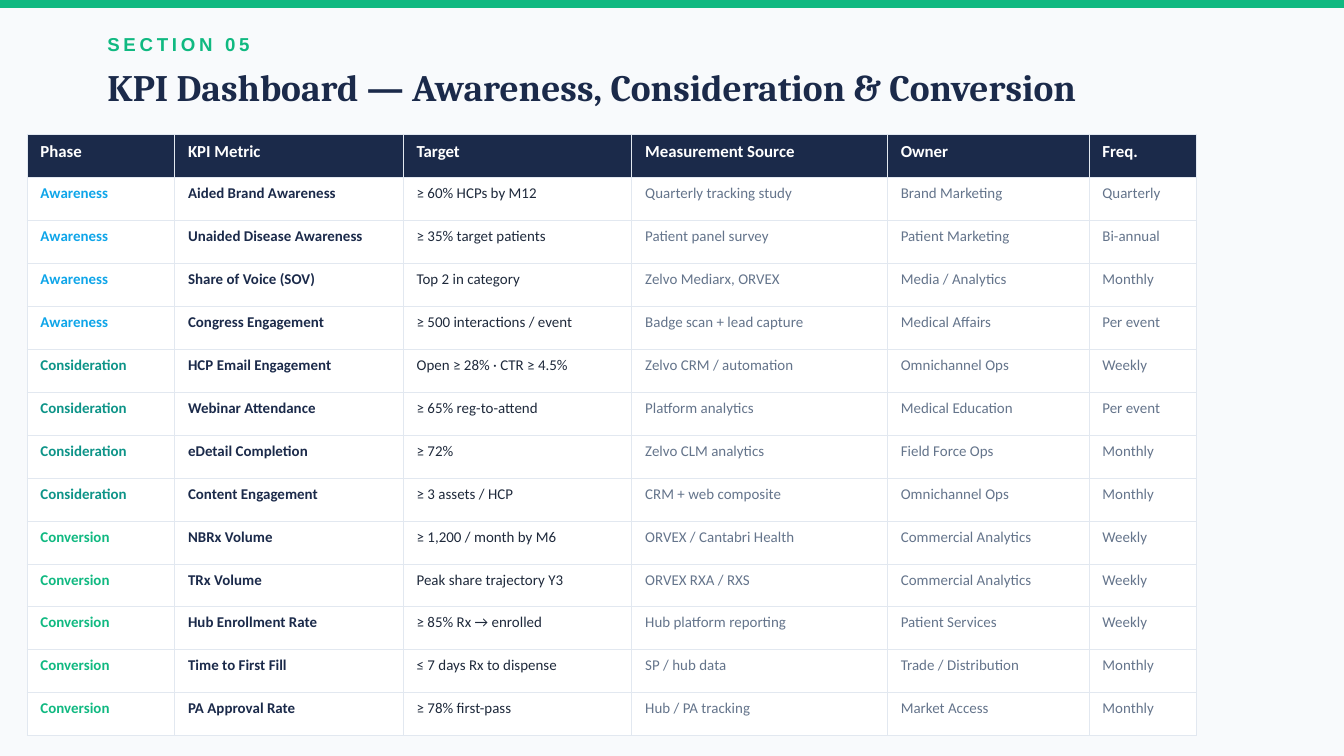
from lxml.etree import SubElement
from pptx import Presentation
from pptx.dml.color import RGBColor
from pptx.enum.shapes import MSO_SHAPE
from pptx.enum.text import MSO_ANCHOR
from pptx.oxml.ns import qn
from pptx.util import Cm, Pt

COLORS = {
    "background": "F8FAFC", "accent": "10B981", "navy": "1B2A4A",
    "white": "FFFFFF", "ink": "1E293B", "muted": "64748B", "border": "E2E8F0",
    "Awareness": "0EA5E9", "Consideration": "0D9488", "Conversion": "10B981",
}

SECTION = "SECTION 05"
TITLE = "KPI Dashboard — Awareness, Consideration & Conversion"

# Heading and width in cm
COLUMNS = [
    ("Phase", 2.79), ("KPI Metric", 4.32), ("Target", 4.32),
    ("Measurement Source", 4.83), ("Owner", 3.81), ("Freq.", 2.03),
]

KPIS = {
    "Awareness": [
        ("Aided Brand Awareness", "≥ 60% HCPs by M12", "Quarterly tracking study", "Brand Marketing", "Quarterly"),
        ("Unaided Disease Awareness", "≥ 35% target patients", "Patient panel survey", "Patient Marketing", "Bi-annual"),
        ("Share of Voice (SOV)", "Top 2 in category", "Zelvo Mediarx, ORVEX", "Media / Analytics", "Monthly"),
        ("Congress Engagement", "≥ 500 interactions / event", "Badge scan + lead capture", "Medical Affairs", "Per event"),
    ],
    "Consideration": [
        ("HCP Email Engagement", "Open ≥ 28% · CTR ≥ 4.5%", "Zelvo CRM / automation", "Omnichannel Ops", "Weekly"),
        ("Webinar Attendance", "≥ 65% reg-to-attend", "Platform analytics", "Medical Education", "Per event"),
        ("eDetail Completion", "≥ 72%", "Zelvo CLM analytics", "Field Force Ops", "Monthly"),
        ("Content Engagement", "≥ 3 assets / HCP", "CRM + web composite", "Omnichannel Ops", "Monthly"),
    ],
    "Conversion": [
        ("NBRx Volume", "≥ 1,200 / month by M6", "ORVEX / Cantabri Health", "Commercial Analytics", "Weekly"),
        ("TRx Volume", "Peak share trajectory Y3", "ORVEX RXA / RXS", "Commercial Analytics", "Weekly"),
        ("Hub Enrollment Rate", "≥ 85% Rx → enrolled", "Hub platform reporting", "Patient Services", "Weekly"),
        ("Time to First Fill", "≤ 7 days Rx to dispense", "SP / hub data", "Trade / Distribution", "Monthly"),
        ("PA Approval Rate", "≥ 78% first-pass", "Hub / PA tracking", "Market Access", "Monthly"),
    ],
}


def rgb(name):
    return RGBColor.from_string(COLORS[name])


def write(frame, text, *, size, color, font="Calibri", bold=False, spacing=None):
    run = frame.paragraphs[0].add_run()
    run.text = text
    run.font.name = font
    run.font.size = Pt(size)
    run.font.bold = bold
    run.font.color.rgb = rgb(color)
    if spacing:
        run._r.get_or_add_rPr().set("spc", str(spacing * 100))


def add_heading(slide, text, top, width, height, **text_format):
    frame = slide.shapes.add_textbox(Cm(2.03), Cm(top), Cm(width), Cm(height)).text_frame
    frame.word_wrap = True
    frame.vertical_anchor = MSO_ANCHOR.MIDDLE
    frame.margin_left = frame.margin_right = frame.margin_top = frame.margin_bottom = 0
    write(frame, text, **text_format)


def add_borders(cell):
    properties = cell._tc.get_or_add_tcPr()
    for side in ("lnL", "lnR", "lnT", "lnB"):
        line = SubElement(properties, qn(f"a:{side}"), w=str(Pt(0.5)))
        fill = SubElement(line, qn("a:solidFill"))
        SubElement(fill, qn("a:srgbClr"), val=COLORS["border"])


def fill_cell(cell, text, fill, **text_format):
    add_borders(cell)  # borders must precede the fill in the cell XML
    cell.fill.solid()
    cell.fill.fore_color.rgb = rgb(fill)
    write(cell.text_frame, text, **text_format)


def add_kpi_table(slide):
    kpi_rows = [(phase, *kpi) for phase, kpis in KPIS.items() for kpi in kpis]
    table = slide.shapes.add_table(
        len(kpi_rows) + 1, len(COLUMNS), Cm(0.51), Cm(2.54),
        Cm(sum(width for _, width in COLUMNS)), Cm(11.38)).table
    table.horz_banding = False

    for column, (heading, width) in enumerate(COLUMNS):
        table.columns[column].width = Cm(width)
        fill_cell(table.cell(0, column), heading, "navy", size=9, color="white", bold=True)

    for row, values in enumerate(kpi_rows, start=1):
        text_colors = (values[0], "navy", "ink", "muted", "muted", "muted")
        for column, (value, color) in enumerate(zip(values, text_colors)):
            fill_cell(table.cell(row, column), value, "white",
                      size=8, color=color, bold=column < 2)


def main():
    deck = Presentation()
    deck.slide_width, deck.slide_height = Cm(25.4), Cm(14.29)
    slide = deck.slides.add_slide(deck.slide_layouts[6])
    slide.background.fill.solid()
    slide.background.fill.fore_color.rgb = rgb("background")

    top_bar = slide.shapes.add_shape(MSO_SHAPE.RECTANGLE, 0, 0, deck.slide_width, Cm(0.15))
    top_bar.shadow.inherit = False
    top_bar.fill.solid()
    top_bar.fill.fore_color.rgb = rgb("accent")
    top_bar.line.fill.background()

    add_heading(slide, SECTION, 0.51, 7.62, 0.64,
                size=10, color="accent", font="Arial", bold=True, spacing=2)
    add_heading(slide, TITLE, 1.07, 22.86, 1.14,
                size=20, color="navy", font="Cambria", bold=True)
    add_kpi_table(slide)
    deck.save("out.pptx")


if __name__ == "__main__":
    main()
